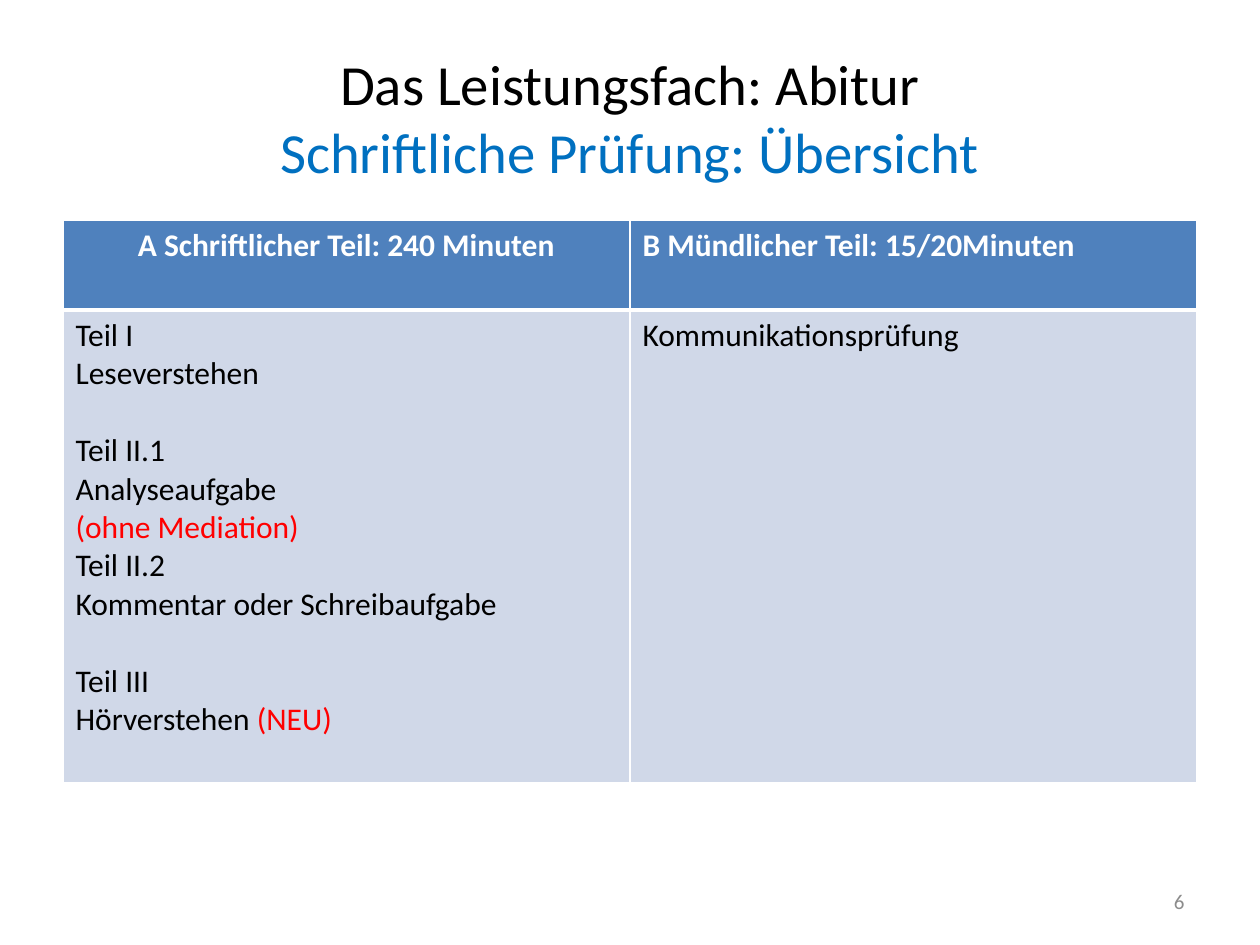
from dataclasses import dataclass

from lxml.etree import SubElement
from pptx import Presentation
from pptx.dml.color import RGBColor
from pptx.enum.text import MSO_ANCHOR, PP_ALIGN
from pptx.oxml.ns import qn
from pptx.util import Inches, Pt


@dataclass(frozen=True)
class Theme:
    font: str = "Calibri"
    black: str = "000000"
    white: str = "FFFFFF"
    blue: str = "0070C0"
    red: str = "FF0000"
    grey: str = "8C8C8C"
    header_fill: str = "4F81BD"
    body_fill: str = "D0D8E8"
    title_size: float = 32.4
    table_size: float = 18
    number_size: float = 12
    line_gap: float = 22


theme = Theme()


def write(frame, paragraphs, size, align=PP_ALIGN.LEFT, bold=False):
    """Each paragraph is (space before, [(text, colour), ...]); a newline in text breaks the line."""
    frame.word_wrap = True
    for index, (gap, spans) in enumerate(paragraphs):
        para = frame.paragraphs[0] if index == 0 else frame.add_paragraph()
        para.alignment = align
        para.space_before = Pt(gap)
        for text, colour in spans:
            for number, line in enumerate(text.split("\n")):
                if number:
                    para.add_line_break()
                span = para.add_run()
                span.text = line
                span.font.name = theme.font
                span.font.size = Pt(size)
                span.font.bold = bold
                span.font.color.rgb = RGBColor.from_string(colour)


def set_borders(cell, widths):
    properties = cell._tc.get_or_add_tcPr()
    for position, (side, points) in enumerate(widths.items()):
        line = properties.makeelement(qn(f"a:{side}"), {"w": str(Pt(points))})
        fill = SubElement(line, qn("a:solidFill"))
        SubElement(fill, qn("a:srgbClr"), val=theme.white)
        properties.insert(position, line)


deck = Presentation()
deck.slide_width, deck.slide_height = Inches(10), Inches(7.5)
page = deck.slides.add_slide(deck.slide_layouts[6])

# Content area: two equal columns between the side margins
margin = int(deck.slide_width * 0.05)
content_width = deck.slide_width - 2 * margin
column_width = content_width // 2

# Title
box = page.shapes.add_textbox(margin, int(deck.slide_height * 0.04), content_width, Inches(1.25))
box.text_frame.vertical_anchor = MSO_ANCHOR.MIDDLE
title = [
    (0, [("Das Leistungsfach: Abitur", theme.black)]),
    (0, [("Schriftliche Prüfung: Übersicht", theme.blue)]),
]
write(box.text_frame, title, theme.title_size, PP_ALIGN.CENTER)

# Table contents
headers = [
    ("A Schriftlicher Teil: 240 Minuten", PP_ALIGN.CENTER),
    ("B Mündlicher Teil: 15/20Minuten", PP_ALIGN.LEFT),
]
bodies = [
    [
        (0, [("Teil I\nLeseverstehen", theme.black)]),
        (theme.line_gap, [("Teil II.1\nAnalyseaufgabe\n", theme.black), ("(ohne Mediation)", theme.red)]),
        (0, [("Teil II.2\nKommentar oder Schreibaufgabe", theme.black)]),
        (theme.line_gap, [("Teil III\nHörverstehen ", theme.black), ("(NEU)", theme.red)]),
    ],
    [(0, [("Kommunikationsprüfung", theme.black)])],
]

# Table
row_heights = [Inches(0.71), Inches(3.75)]
table = page.shapes.add_table(2, 2, margin, Inches(1.75), content_width, sum(row_heights)).table
for row, height in zip(table.rows, row_heights):
    row.height = height

for column, ((heading, align), body) in enumerate(zip(headers, bodies)):
    table.columns[column].width = column_width
    header_cell, body_cell = table.cell(0, column), table.cell(1, column)
    write(header_cell.text_frame, [(0, [(heading, theme.white)])], theme.table_size, align, bold=True)
    write(body_cell.text_frame, body, theme.table_size)
    for cell, colour, top, bottom in (
        (header_cell, theme.header_fill, 1, 3),
        (body_cell, theme.body_fill, 3, 1),
    ):
        cell.fill.solid()
        cell.fill.fore_color.rgb = RGBColor.from_string(colour)
        set_borders(cell, {"lnL": 1, "lnR": 1, "lnT": top, "lnB": bottom})

# Slide number, flush with the right margin
number_width = Inches(2.33)
box = page.shapes.add_textbox(
    margin + content_width - number_width, Inches(6.95), number_width, Inches(0.4)
)
box.text_frame.vertical_anchor = MSO_ANCHOR.MIDDLE
write(box.text_frame, [(0, [("6", theme.grey)])], theme.number_size, PP_ALIGN.RIGHT)

deck.save("out.pptx")
